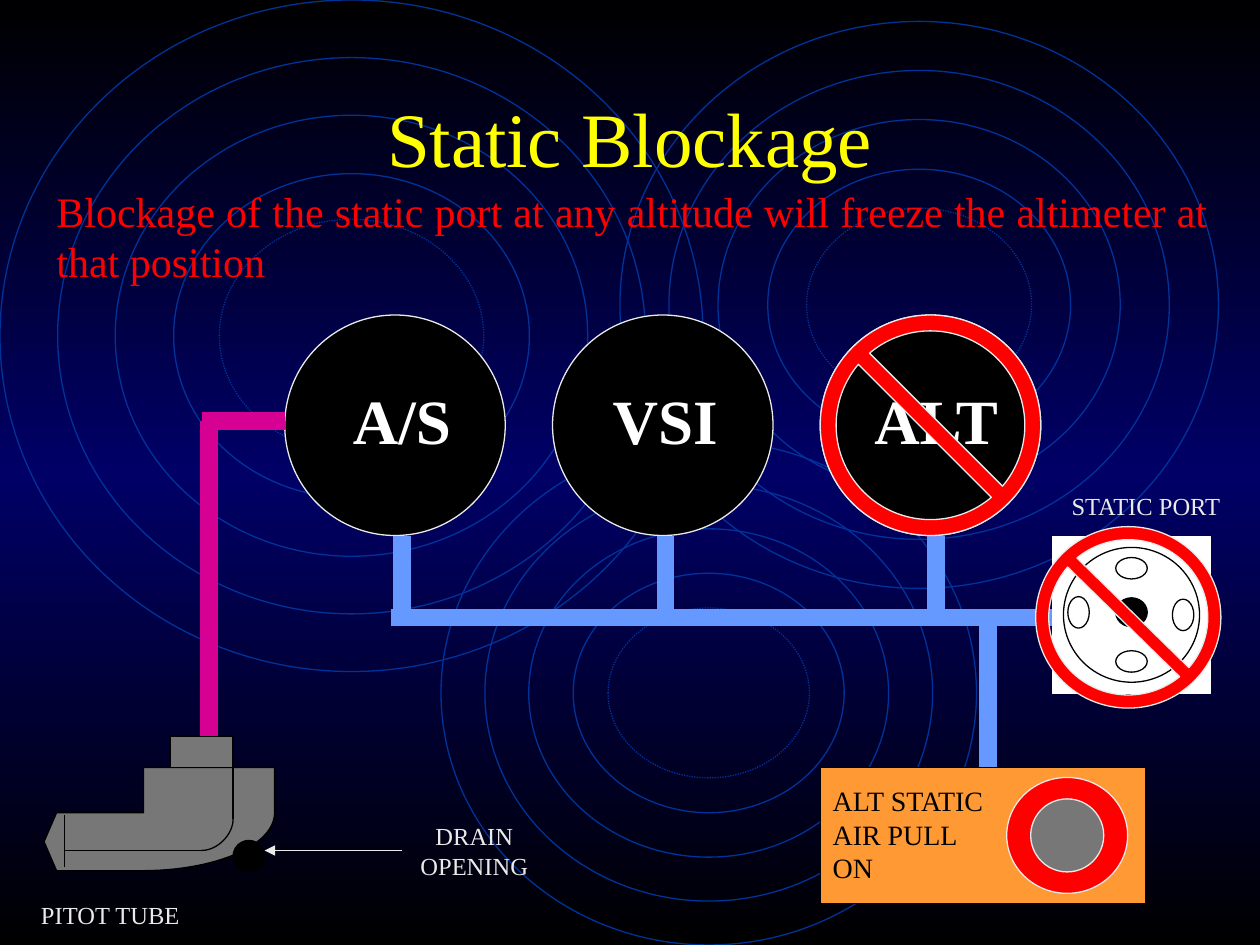
from copy import deepcopy

from lxml.etree import SubElement
from pptx import Presentation
from pptx.dml.color import RGBColor
from pptx.enum.dml import MSO_LINE
from pptx.enum.shapes import MSO_CONNECTOR as LINK, MSO_SHAPE as SHAPE
from pptx.enum.text import MSO_ANCHOR as ANCHOR, PP_ALIGN as ALIGN
from pptx.oxml.ns import qn
from pptx.util import Inches, Pt

COLUMNS, ROWS = 10, 7.5
CELL = Inches(1)
FONT = "Times New Roman"

BLACK = RGBColor(0x00, 0x00, 0x00)
WHITE = RGBColor(0xFF, 0xFF, 0xFF)
NAVY = RGBColor(0x00, 0x00, 0x66)
RIPPLE_BLUE = RGBColor(0x00, 0x33, 0x99)
STATIC_BLUE = RGBColor(0x66, 0x99, 0xFF)
PITOT_PINK = RGBColor(0xD6, 0x00, 0x93)
YELLOW = RGBColor(0xFF, 0xFF, 0x00)
RED = RGBColor(0xFF, 0x00, 0x00)
ORANGE = RGBColor(0xFF, 0x99, 0x33)
METAL = RGBColor(0x77, 0x77, 0x77)
PALE = RGBColor(0xEA, 0xEA, 0xEA)

RIPPLES = [(0, 0, 5.58, 5.33), (3.5, 3.5, 4.25, 4), (4.92, 0.17, 4.75, 4.5)]
RIPPLE_INSETS = [0, 0.082, 0.164, 0.247, 0.312]
DIAL_LEFT, DIAL_TOP, DIAL_SIZE, DIAL_STEP = 2.26, 2.5, 1.75, 2.125
INSTRUMENTS = [("A/S", 3.19, 1.17), ("VSI", 5.28, 1.17), ("ALT", 7.43, 1.67)]
MANIFOLD_ROW = 4.9
PORT_CENTRE = (8.98, 4.88)


def cells(*counts):
    """Turn grid counts into whole lengths."""
    return [int(count * CELL) for count in counts]


def style(shape, fill, line):
    """Give a shape its fill and thin outline, without shadow."""
    shape.shadow.inherit = False
    if fill is None:
        shape.fill.background()
    else:
        shape.fill.solid()
        shape.fill.fore_color.rgb = fill
    shape.line.color.rgb = line
    shape.line.width = Pt(0.75)
    return shape


def add_figure(shapes, kind, area, fill=None, line=BLACK):
    """Add a preset shape over a grid area."""
    return style(shapes.add_shape(kind, *cells(*area)), fill, line)


def add_centred(shapes, kind, centre, size, fill=None, line=BLACK):
    """Add a preset shape around a grid point."""
    (x, y), (width, height) = centre, size
    area = (x - width / 2, y - height / 2, width, height)
    return add_figure(shapes, kind, area, fill, line)


def add_line(shapes, start, end, color=BLACK, width=0.75, kind=LINK.STRAIGHT):
    """Add a connector between two grid points."""
    line = shapes.add_connector(kind, *cells(*start, *end))
    line.line.color.rgb = color
    line.line.width = Pt(width)
    SubElement(line._element.spPr, qn("a:effectLst"))
    return line


def add_pipe(shapes, start, end, color=STATIC_BLUE):
    """Add a thick pressure line."""
    return add_line(shapes, start, end, color, 10)


def add_label(shapes, words, area, size, color, align=ALIGN.CENTER, bold=False):
    """Add a wrapped text box and return its frame."""
    frame = shapes.add_textbox(*cells(*area)).text_frame
    frame.word_wrap = True
    frame.text = words
    paragraph = frame.paragraphs[0]
    paragraph.alignment = align
    font = paragraph.runs[0].font
    font.name, font.size, font.bold = FONT, Pt(size), bold
    font.color.rgb = color
    return frame


def add_prohibition(shapes, area, thickness):
    """Add a red blocked sign with a ring of the given share."""
    sign = add_figure(shapes, SHAPE.NO_SYMBOL, area, RED, PALE)
    sign.adjustments[0] = thickness


def curve(start, first, second, end, steps=24):
    """List the points of a cubic curve after its start."""
    points = []
    for step in range(1, steps + 1):
        t = step / steps
        weights = ((1 - t) ** 3, 3 * t * (1 - t) ** 2, 3 * t * t * (1 - t), t ** 3)
        corners = (start, first, second, end)
        points.append(tuple(sum(w * c[axis] for w, c in zip(weights, corners))
                            for axis in (0, 1)))
    return points


def paint_background(slide):
    """Fill the slide from black through navy to black."""
    fill = slide.background.fill
    fill.gradient()
    fill.gradient_angle = 270
    first = slide._element.find(".//" + qn("a:gs"))
    first.addnext(deepcopy(first))
    for stop, color, place in zip(fill.gradient_stops, (BLACK, NAVY, BLACK), (0, 0.5, 1)):
        stop.color.rgb = color
        stop.position = place


def add_ripples(shapes):
    """Add the groups of concentric background rings."""
    for left, top, width, height in RIPPLES:
        group = shapes.add_group_shape()
        for share in RIPPLE_INSETS:
            inset = share * width
            area = (left + inset, top + inset, width - 2 * inset, height - 2 * inset)
            ring = add_figure(group.shapes, SHAPE.OVAL, area, line=RIPPLE_BLUE)
        ring.line.dash_style = MSO_LINE.ROUND_DOT


def add_instruments(shapes):
    """Add the three dials, their static lines and names."""
    for index, (name, centre, width) in enumerate(INSTRUMENTS):
        dial = (DIAL_LEFT + index * DIAL_STEP, DIAL_TOP, DIAL_SIZE, DIAL_SIZE)
        add_figure(shapes, SHAPE.OVAL, dial, BLACK, PALE)
        add_pipe(shapes, (centre, DIAL_TOP + DIAL_SIZE), (centre, 4.84))
        add_label(shapes, name, (centre - width / 2, 2.98, width, 0.7), 36, WHITE, bold=True)
    add_prohibition(shapes, dial, 0.072)


def add_static_port(shapes):
    """Add the static line and its blocked port."""
    x, y = PORT_CENTRE
    add_pipe(shapes, (3.1, MANIFOLD_ROW), (8.35, MANIFOLD_ROW))
    add_pipe(shapes, (7.84, MANIFOLD_ROW), (7.84, 6.09))
    add_centred(shapes, SHAPE.RECTANGLE, PORT_CENTRE, (1.25, 1.25), WHITE, WHITE)
    add_centred(shapes, SHAPE.OVAL, PORT_CENTRE, (1.08, 1.07))
    add_centred(shapes, SHAPE.OVAL, (x, 4.86), (0.25, 0.23), BLACK)
    for dx, dy, turn in ((0, -0.37, 0), (0, 0.37, 0), (-0.42, -0.02, 270), (0.41, 0, 270)):
        vent = add_centred(shapes, SHAPE.OVAL, (x + dx, y + dy), (0.25, 0.17))
        vent.rotation = turn
    add_label(shapes, "STATIC PORT", (8.31, 3.85, 1.57, 0.33), 14, PALE)
    add_prohibition(shapes, (8.22, 4.18, 1.47, 1.44), 0.072)


def add_alternate_air(shapes):
    """Add the alternate static air panel with its knob."""
    add_figure(shapes, SHAPE.RECTANGLE, (6.51, 6.09, 2.58, 1.08), ORANGE)
    add_centred(shapes, SHAPE.OVAL, (8.47, 6.63), (0.96, 0.92), RED, PALE)
    add_centred(shapes, SHAPE.OVAL, (8.47, 6.63), (0.58, 0.58), METAL, PALE)
    add_label(shapes, "ALT STATIC AIR PULL ON", (6.51, 6.17, 1.42, 0.9), 16, BLACK, ALIGN.LEFT)


def add_pitot_tube(shapes):
    """Add the pitot tube, its pressure line and drain."""
    belly = curve((1.13, 6.91), (1.71, 6.91), (2.18, 6.71), (2.18, 6.45))
    outline = [(0.45, 6.91), (1.13, 6.91), *belly, (2.18, 6.09),
               (1.14, 6.09), (1.14, 6.45), (0.45, 6.45)]
    builder = shapes.build_freeform(*cells(0.35, 6.68))
    builder.add_line_segments([cells(*point) for point in outline], close=True)
    style(builder.convert_to_shape(), METAL, BLACK)
    add_figure(shapes, SHAPE.RECTANGLE, (1.35, 5.84, 0.5, 0.25), METAL)
    add_pipe(shapes, (2.26, 3.34), (1.6, 3.34), PITOT_PINK)
    add_pipe(shapes, (1.66, 5.84), (1.66, 3.34), PITOT_PINK)
    add_figure(shapes, SHAPE.OVAL, (1.85, 6.67, 0.25, 0.25), BLACK)
    for start, end in (((0.51, 6.47), (0.51, 6.88)), ((1.85, 6.09), (1.85, 6.5)),
                       ((0.51, 6.75), (1.6, 6.75))):
        add_line(shapes, start, end)
    bend = add_line(shapes, (1.6, 6.75), (1.85, 6.5), kind=LINK.CURVE)
    bend._element.spPr.find(qn("a:prstGeom")).set("prst", "curvedConnector2")
    add_label(shapes, "PITOT TUBE", (0.09, 7.09, 1.57, 0.33), 14, PALE)
    add_label(shapes, "DRAIN OPENING", (2.98, 6.47, 1.57, 0.57), 14, PALE)
    pointer = add_line(shapes, (3.19, 6.75), (2.1, 6.75), PALE)
    SubElement(pointer.line._get_or_add_ln(), qn("a:tailEnd"), type="triangle")


def main():
    """Build the static blockage slide."""
    deck = Presentation()
    deck.slide_width, deck.slide_height = cells(COLUMNS, ROWS)
    slide = deck.slides.add_slide(deck.slide_layouts[6])
    shapes = slide.shapes
    paint_background(slide)
    add_ripples(shapes)
    title = add_label(shapes, "Static Blockage", (0.75, 0.5, 8.5, 1.17), 44, YELLOW)
    title.vertical_anchor = ANCHOR.MIDDLE
    add_instruments(shapes)
    add_static_port(shapes)
    add_alternate_air(shapes)
    add_pitot_tube(shapes)
    add_label(shapes, "Blockage of the static port at any altitude will freeze the "
              "altimeter at that position", (0.35, 1.42, 9.34, 0.91), 24, RED, ALIGN.JUSTIFY)
    deck.save("out.pptx")


if __name__ == "__main__":
    main()
